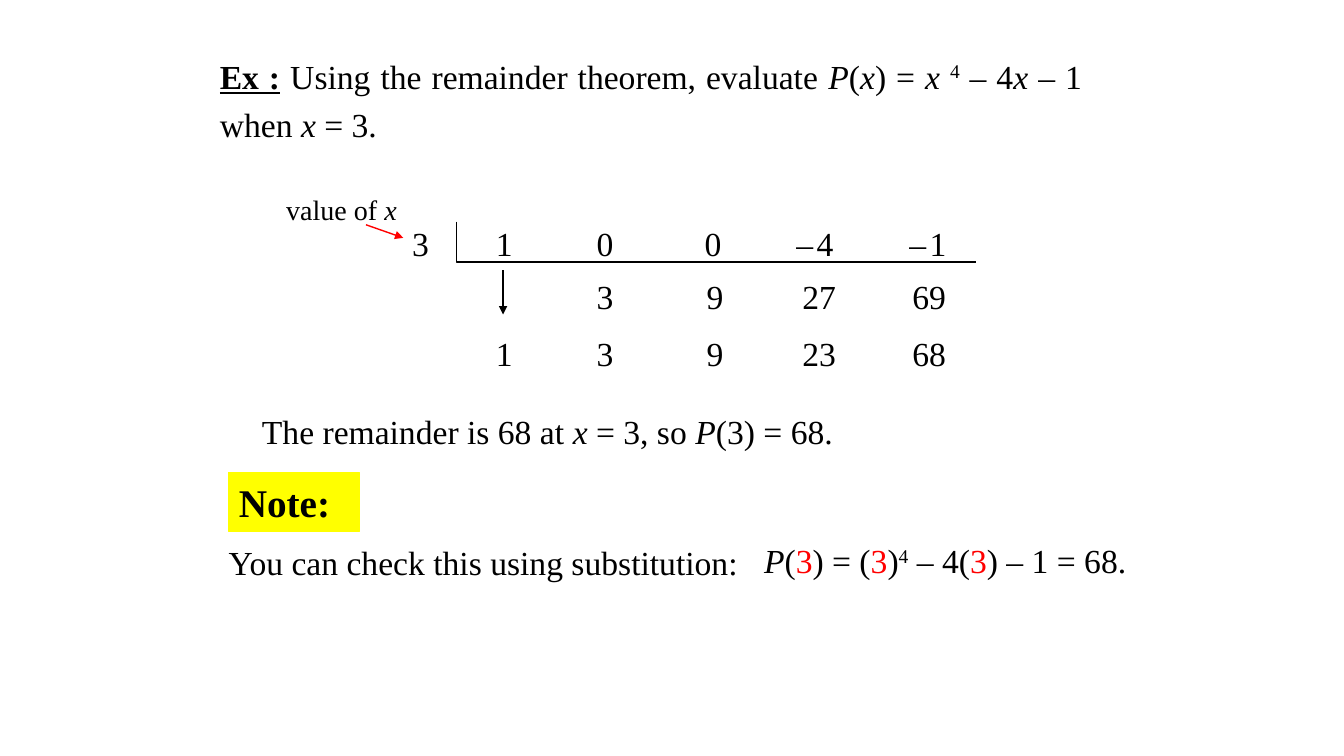
import dataclasses
import pptx
import pptx.dml.color
import pptx.enum.shapes
import pptx.enum.text
import pptx.oxml
import pptx.oxml.ns
import pptx.util
from pptx.util import Inches


@dataclasses.dataclass(frozen=True)
class Theme:
    font: str = "Times New Roman"
    ink: str = "000000"
    red: str = "FF0000"
    mark: str = "FFFF00"
    thin: int = 10
    small: int = 20
    body: int = 24
    head: int = 28
    space: float = 1.2


THEME = Theme()
COLS = (4.82, 5.82, 6.91, 7.86, 8.95)
TABS = (1, 2.07, 2.98, 4.1)
ROWS = (
    (2.61, ("", "3", "9", "27", "69")),
    (3.17, ("1", "3", "9", "23", "68")),
)
TASK = (
    ("Ex :", "bu"), (" Using the remainder theorem, evaluate ", ""),
    ("P", "i"), ("(", ""), ("x", "i"), (") = ", ""), ("x ", "i"),
    ("4", "s"), (" – 4", ""), ("x ", "i"), ("– 1 when ", ""),
    ("x ", "i"), ("= 3.", ""),
)
TERMS = (("1\t0\t0\t–", ""), (" ", "t"), ("4\t–", ""), (" ", "t"), ("1", ""))
RESULT = (
    ("The remainder is 68 at ", ""), ("x", "i"), (" = 3, so ", ""),
    ("P", "i"), ("(3) = 68.", ""),
)
CHECK = (
    ("P", "i"), ("(", ""), ("3", "r"), (") = (", ""), ("3", "r"),
    (")", ""), ("4", "s"), (" – 4(", ""), ("3", "r"), (") – 1 = 68.", ""),
)


def color(code):
    return pptx.dml.color.RGBColor.from_string(code)


def add_runs(para, parts, size):
    for text, style in parts:
        run = para.add_run()
        run.text = text
        font = run.font
        font.name = THEME.font
        font.size = pptx.util.Pt(THEME.thin if "t" in style else size)
        font.color.rgb = color(THEME.red if "r" in style else THEME.ink)
        font.bold = "b" in style
        font.italic = "i" in style
        font.underline = "u" in style
        if "s" in style:
            run._r.get_or_add_rPr().set("baseline", "30000")


def place(shape, left, top, width, height):
    shape.left, shape.top = Inches(left), Inches(top)
    shape.width, shape.height = Inches(width), Inches(height)


def add_title(slide, parts, box):
    title = slide.shapes.title
    place(title, *box)
    frame = title.text_frame
    frame.auto_size = pptx.enum.text.MSO_AUTO_SIZE.NONE
    frame.vertical_anchor = pptx.enum.text.MSO_ANCHOR.TOP
    frame.word_wrap = True
    para = frame.paragraphs[0]
    para.alignment = pptx.enum.text.PP_ALIGN.JUSTIFY
    para.line_spacing = THEME.space
    add_runs(para, parts, THEME.body)


def add_text(shapes, parts, left, top, width, height=0.54, size=THEME.body):
    box = shapes.add_textbox(
        Inches(left), Inches(top), Inches(width), Inches(height))
    box.text_frame.word_wrap = False
    para = box.text_frame.paragraphs[0]
    para.line_spacing = THEME.space
    add_runs(para, parts, size)
    return para


def set_tabs(para, stops):
    props = para._p.get_or_add_pPr()
    tabs = pptx.oxml.parse_xml(
        f'<a:tabLst {pptx.oxml.ns.nsdecls("a")}/>')
    for stop in stops:
        tab = tabs.makeelement(pptx.oxml.ns.qn("a:tab"), {
            "pos": str(Inches(stop)), "algn": "l"})
        tabs.append(tab)
    props.append(tabs)


def add_arrow(shapes, start, end, code):
    line = shapes.add_connector(
        pptx.enum.shapes.MSO_CONNECTOR.STRAIGHT,
        *map(Inches, start + end))
    line.line.color.rgb = color(code)
    line.line.width = pptx.util.Pt(1)
    space = pptx.oxml.ns.nsdecls("a")
    line.line._get_or_add_ln().append(
        pptx.oxml.parse_xml(f'<a:tailEnd {space} type="triangle"/>'))
    line._element.spPr.append(
        pptx.oxml.parse_xml(f"<a:effectLst {space}/>"))


def add_frame(shapes, points):
    first, *rest = [tuple(map(Inches, point)) for point in points]
    path = shapes.build_freeform(*first)
    path.add_line_segments(rest, close=False)
    shape = path.convert_to_shape()
    shape.shadow.inherit = False
    shape.fill.background()
    shape.line.color.rgb = color(THEME.ink)
    shape.line.width = pptx.util.Pt(1)


def add_note(shapes, text, box):
    note = shapes.add_shape(
        pptx.enum.shapes.MSO_SHAPE.RECTANGLE, *map(Inches, box))
    note.shadow.inherit = False
    note.fill.solid()
    note.fill.fore_color.rgb = color(THEME.mark)
    note.line.color.rgb = color(THEME.mark)
    note.line.width = pptx.util.Pt(0.75)
    note.text_frame.vertical_anchor = pptx.enum.text.MSO_ANCHOR.MIDDLE
    para = note.text_frame.paragraphs[0]
    para.alignment = pptx.enum.text.PP_ALIGN.JUSTIFY
    add_runs(para, ((text, "b"),), THEME.head)


def add_grid(shapes):
    add_text(shapes, (("3", ""),), 3.99, 2.08, 0.37)
    terms = add_text(shapes, TERMS, COLS[0], 2.08, 4.73)
    set_tabs(terms, TABS)
    add_frame(shapes, ((4.53, 2.2), (4.53, 2.6), (9.68, 2.6)))
    add_arrow(shapes, (4.99, 2.68), (4.99, 3.12), THEME.ink)
    for top, cells in ROWS:
        for left, text in zip(COLS, cells):
            if text:
                width = 0.2 + 0.17 * len(text)
                add_text(shapes, ((text, ""),), left, top, width)


def add_label(shapes):
    group = shapes.add_group_shape().shapes
    add_text(group, (("value of ", ""), ("x", "i")),
             2.74, 1.79, 1.64, 0.47, THEME.small)
    add_arrow(group, (3.63, 2.23), (4, 2.36), THEME.red)


def main():
    deck = pptx.Presentation()
    deck.slide_width, deck.slide_height = Inches(13.33), Inches(7.5)
    slide = deck.slides.add_slide(deck.slide_layouts[5])
    shapes = slide.shapes
    add_title(slide, TASK, (2.08, 0.42, 8.75, 1.06))
    add_grid(shapes)
    add_label(shapes)
    add_text(shapes, RESULT, 2.5, 3.95, 5.91)
    add_note(shapes, "Note:", (2.27, 4.69, 1.3, 0.58))
    add_text(shapes, (("You can check this using substitution:", ""),),
             2.17, 5.25, 5.3)
    add_text(shapes, CHECK, 7.48, 5.23, 4.27)
    deck.save("out.pptx")


if __name__ == "__main__":
    main()
